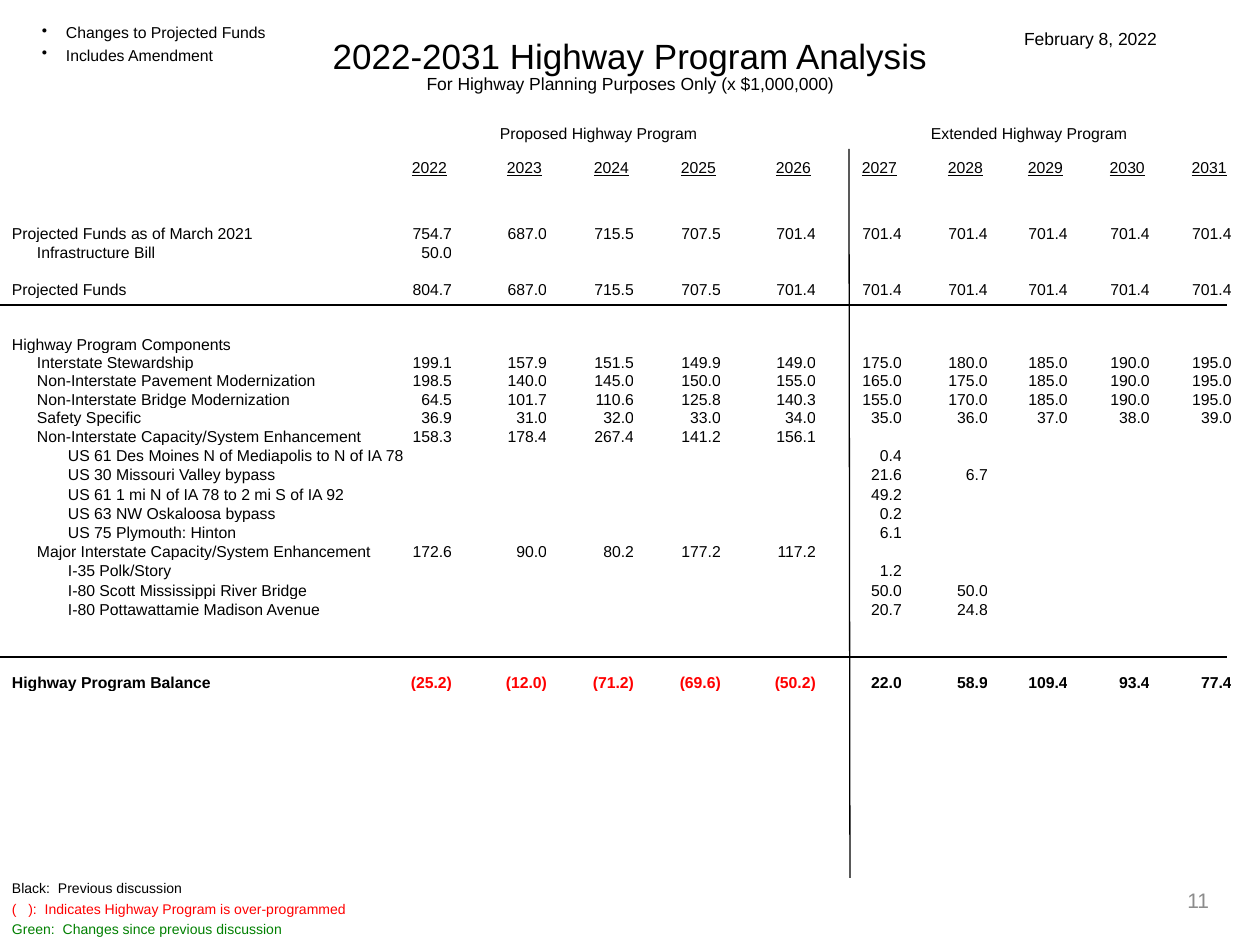
from dataclasses import dataclass
from itertools import pairwise

from lxml import etree
from pptx import Presentation
from pptx.dml.color import RGBColor
from pptx.enum.shapes import MSO_CONNECTOR
from pptx.enum.text import MSO_ANCHOR, PP_ALIGN
from pptx.oxml.ns import qn
from pptx.util import Emu, Pt

LEFT, CENTER, RIGHT = PP_ALIGN.LEFT, PP_ALIGN.CENTER, PP_ALIGN.RIGHT
BOTTOM = MSO_ANCHOR.BOTTOM
STRAIGHT = MSO_CONNECTOR.STRAIGHT
EMU_PER_PX = 914400 // 126


@dataclass(frozen=True)
class Theme:
    font: str = "Arial"
    black: str = "000000"
    red: str = "FF0000"
    green: str = "008000"
    gray: str = "8C8C8C"
    title: int = 20
    number: int = 12
    subtitle: int = 10
    body: int = 9
    legend: int = 8
    rule: float = 0.75


@dataclass(frozen=True)
class Row:
    label: str
    values: tuple[str, ...] = ()
    level: int = 0
    start: int = 0
    lead: float = 0
    bold: bool = False


@dataclass(frozen=True)
class Caption:
    text: str
    left: int
    top: int
    width: int
    height: int
    size: int = Theme.body
    align: PP_ALIGN = CENTER
    color: str = Theme.black


@dataclass(frozen=True)
class Rule:
    x1: int
    y1: int
    x2: int
    y2: int


THEME = Theme()
YEARS = tuple(str(year) for year in range(2022, 2032))
COLUMN_EDGES = (0, 408, 452, 547, 634, 721, 816, 902, 988, 1068, 1150, 1232)
LEVEL_INDENTS = (12, 37, 68)
YEAR_INSET = 5
TABLE_TOP = 158
ROW_HEIGHT = 366 * EMU_PER_PX // 20
FLAT = ("701.4",) * 5

ROWS = (
    Row("Projected Funds as of March 2021",
        ("754.7", "687.0", "715.5", "707.5", "701.4", *FLAT), lead=2.6),
    Row("Infrastructure Bill", ("50.0",), 1),
    Row("Projected Funds",
        ("804.7", "687.0", "715.5", "707.5", "701.4", *FLAT), lead=1),
    Row("Highway Program Components", lead=2),
    Row("Interstate Stewardship",
        ("199.1", "157.9", "151.5", "149.9", "149.0",
         "175.0", "180.0", "185.0", "190.0", "195.0"), 1),
    Row("Non-Interstate Pavement Modernization",
        ("198.5", "140.0", "145.0", "150.0", "155.0",
         "165.0", "175.0", "185.0", "190.0", "195.0"), 1),
    Row("Non-Interstate Bridge Modernization",
        ("64.5", "101.7", "110.6", "125.8", "140.3",
         "155.0", "170.0", "185.0", "190.0", "195.0"), 1),
    Row("Safety Specific",
        ("36.9", "31.0", "32.0", "33.0", "34.0",
         "35.0", "36.0", "37.0", "38.0", "39.0"), 1),
    Row("Non-Interstate Capacity/System Enhancement",
        ("158.3", "178.4", "267.4", "141.2", "156.1"), 1),
    Row("US 61 Des Moines N of Mediapolis to N of IA 78", ("0.4",), 2, 5),
    Row("US 30 Missouri Valley bypass", ("21.6", "6.7"), 2, 5),
    Row("US 61 1 mi N of IA 78 to 2 mi S of IA 92", ("49.2",), 2, 5),
    Row("US 63 NW Oskaloosa bypass", ("0.2",), 2, 5),
    Row("US 75 Plymouth: Hinton", ("6.1",), 2, 5),
    Row("Major Interstate Capacity/System Enhancement",
        ("172.6", "90.0", "80.2", "177.2", "117.2"), 1),
    Row("I-35 Polk/Story", ("1.2",), 2, 5),
    Row("I-80 Scott Mississippi River Bridge", ("50.0", "50.0"), 2, 5),
    Row("I-80 Pottawattamie Madison Avenue", ("20.7", "24.8"), 2, 5),
    Row("Highway Program Balance",
        ("(25.2)", "(12.0)", "(71.2)", "(69.6)", "(50.2)",
         "22.0", "58.9", "109.4", "93.4", "77.4"), lead=3, bold=True),
)

CAPTIONS = (
    Caption("2022-2031 Highway Program Analysis", 0, 35, 1260, 40, THEME.title),
    Caption("For Highway Planning Purposes Only (x $1,000,000)",
            0, 73, 1260, 20, THEME.subtitle),
    Caption("February 8, 2022", 950, 28, 281, 20, THEME.subtitle),
    Caption("Proposed Highway Program", 408, 124, 381, 18),
    Caption("Extended Highway Program", 849, 124, 360, 18),
    Caption("11", 927, 888, 282, 24, THEME.number, RIGHT, THEME.gray),
)
NOTES = ("Changes to Projected Funds", "Includes Amendment")
LEGEND = (
    ("Black:  Previous discussion", THEME.black),
    ("(   ):  Indicates Highway Program is over-programmed", THEME.red),
    ("Green:  Changes since previous discussion", THEME.green),
)
RULES = (
    Rule(0, 305, 1227, 305),
    Rule(849, 149, 850, 878),
    Rule(0, 657, 1227, 657),
)


def px(length: int) -> Emu:
    return Emu(length * EMU_PER_PX)


def write(paragraph, text: str, *, size: int = THEME.body, align=LEFT,
          color: str = THEME.black, bold: bool = False,
          underline: bool = False, before: int = 0, bullet: int = 0) -> None:
    paragraph.alignment = align
    paragraph.space_before = Pt(before)
    if text:
        run = paragraph.add_run()
        run.text = text
        run.font.name = THEME.font
        run.font.size = Pt(size)
        run.font.bold = bold
        run.font.underline = underline
        run.font.color.rgb = RGBColor.from_string(color)
    else:
        paragraph._p.get_or_add_endParaRPr().set("sz", str(size * 100))
    if bullet:
        properties = paragraph._p.get_or_add_pPr()
        properties.set("marL", str(px(bullet)))
        properties.set("indent", str(-px(bullet)))
        etree.SubElement(properties, qn("a:buChar")).set("char", "•")


def add_frame(slide, left: int, top: int, width: int, height: int):
    frame = slide.shapes.add_textbox(px(left), px(top), px(width), px(height)).text_frame
    frame.word_wrap = True
    frame.margin_left = frame.margin_right = frame.margin_top = frame.margin_bottom = 0
    return frame


def next_paragraph(frame, index: int):
    return frame.add_paragraph() if index else frame.paragraphs[0]


def fill_cell(cell, text: str, left: int = 0, right: int = 0, **style) -> None:
    cell.fill.background()
    cell.vertical_anchor = BOTTOM
    cell.margin_top = cell.margin_bottom = 0
    cell.margin_left, cell.margin_right = px(left), px(right)
    write(cell.text_frame.paragraphs[0], text, **style)


def add_program_table(slide) -> None:
    height = int(ROW_HEIGHT * (len(ROWS) + 1 + sum(row.lead for row in ROWS)))
    program = slide.shapes.add_table(
        len(ROWS) + 1, len(COLUMN_EDGES) - 1, 0, px(TABLE_TOP),
        px(COLUMN_EDGES[-1]), height).table
    program.first_row = program.horz_banding = False
    for column, (start, end) in zip(program.columns, pairwise(COLUMN_EDGES)):
        column.width = px(end - start)
    program.rows[0].height = ROW_HEIGHT
    fill_cell(program.cell(0, 0), "")
    for index, year in enumerate(YEARS, 1):
        fill_cell(program.cell(0, index), year, right=YEAR_INSET,
                  align=RIGHT, underline=True)
    for line, row in enumerate(ROWS, 1):
        program.rows[line].height = int(ROW_HEIGHT * (1 + row.lead))
        fill_cell(program.cell(line, 0), row.label,
                  left=LEVEL_INDENTS[row.level], bold=row.bold)
        amounts = ("",) * row.start + row.values
        amounts += ("",) * (len(YEARS) - len(amounts))
        for index, amount in enumerate(amounts, 1):
            color = THEME.red if amount.startswith("(") else THEME.black
            fill_cell(program.cell(line, index), amount, align=RIGHT,
                      color=color, bold=row.bold)


def add_rule(slide, rule: Rule) -> None:
    divider = slide.shapes.add_connector(
        STRAIGHT, px(rule.x1), px(rule.y1), px(rule.x2), px(rule.y2))
    divider.line.color.rgb = RGBColor.from_string(THEME.black)
    divider.line.width = Pt(THEME.rule)
    etree.SubElement(divider._element.spPr, qn("a:effectLst"))


def main() -> None:
    deck = Presentation()
    deck.slide_width, deck.slide_height = px(1260), px(945)
    slide = deck.slides.add_slide(deck.slide_layouts[6])
    add_program_table(slide)
    for caption in CAPTIONS:
        frame = add_frame(slide, caption.left, caption.top, caption.width, caption.height)
        write(frame.paragraphs[0], caption.text, size=caption.size,
              align=caption.align, color=caption.color)
    for rule in RULES:
        add_rule(slide, rule)
    notes = add_frame(slide, 42, 23, 290, 40)
    for index, note in enumerate(NOTES):
        write(next_paragraph(notes, index), note, before=2 * (index > 0), bullet=24)
    legend = add_frame(slide, 12, 880, 470, 56)
    for index, (meaning, color) in enumerate(LEGEND):
        write(next_paragraph(legend, index), meaning, size=THEME.legend,
              color=color, before=2 * (index > 0))
    deck.save("out.pptx")


if __name__ == "__main__":
    main()
